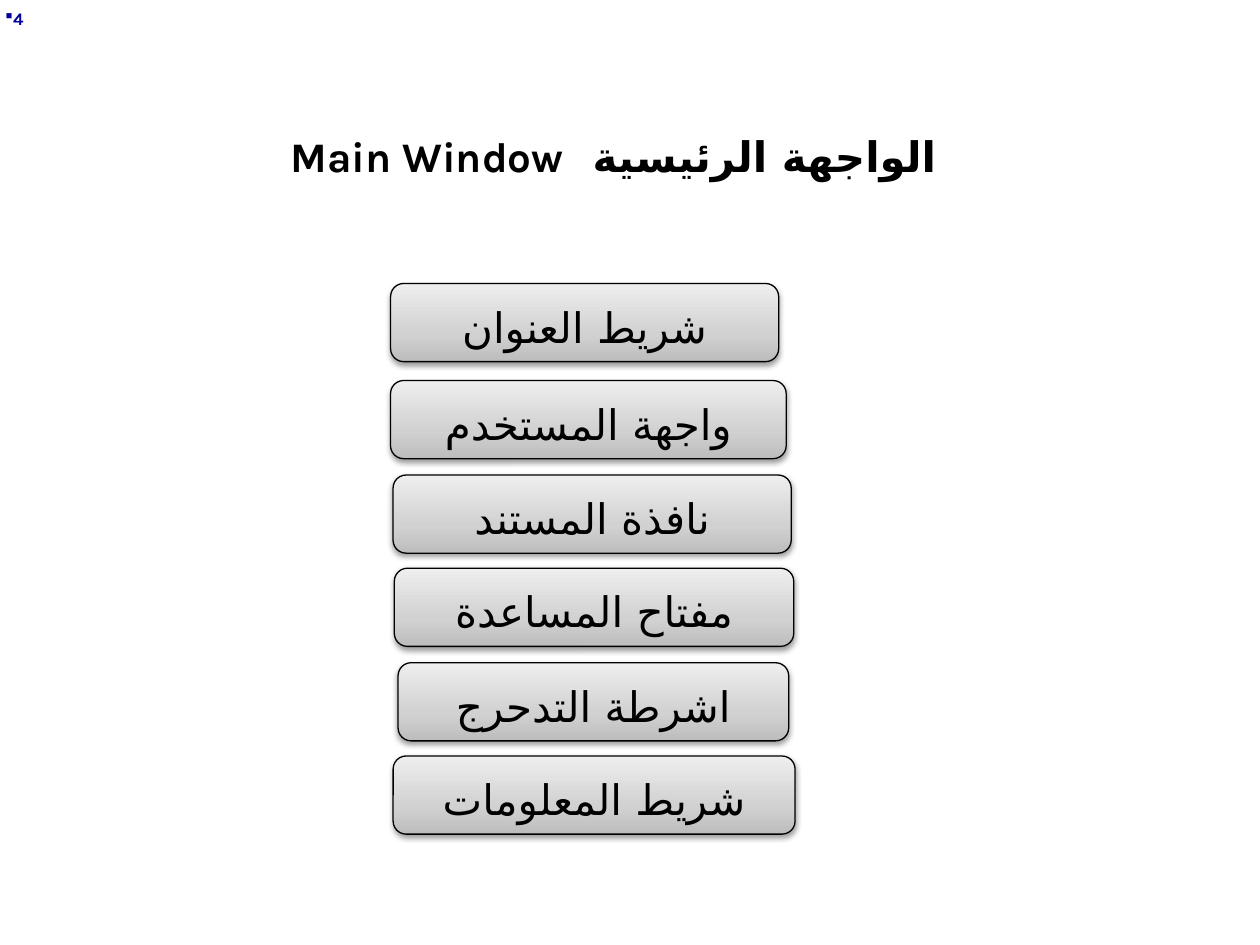
from lxml import etree
from pptx import Presentation
from pptx.dml.color import RGBColor
from pptx.enum.shapes import MSO_SHAPE
from pptx.enum.text import MSO_ANCHOR, MSO_AUTO_SIZE, PP_ALIGN
from pptx.oxml.ns import qn
from pptx.util import Inches, Pt

ROUNDED = MSO_SHAPE.ROUNDED_RECTANGLE
MIDDLE = MSO_ANCHOR.MIDDLE
GROW = MSO_AUTO_SIZE.SHAPE_TO_FIT_TEXT
CENTER = PP_ALIGN.CENTER

BLACK = RGBColor(0x00, 0x00, 0x00)
NAVY = RGBColor(0x00, 0x00, 0x99)
GREYS = [(0, RGBColor(0xBD, 0xBD, 0xBD)),
         (35, RGBColor(0xD1, 0xD1, 0xD1)),
         (100, RGBColor(0xEE, 0xEE, 0xEE))]

# left, top, width, label
BUTTONS = [
    (3.10, 2.25, 3.08, "شريط العنوان"),
    (3.10, 3.02, 3.14, "واجهة المستخدم"),
    (3.12, 3.77, 3.16, "نافذة المستند"),
    (3.13, 4.51, 3.17, "مفتاح المساعدة"),
    (3.16, 5.26, 3.10, "اشرطة التدحرج"),
    (3.12, 6.00, 3.19, "شريط المعلومات"),
]
BUTTON_HEIGHT = 0.62


def add_xml(parent, tag, **attrs):
    return etree.SubElement(parent, qn(tag), attrs)


class SlideBuilder:
    font = "Karla"
    arabic_font = "DejaVu Sans"
    text_size = 24
    number_size = 10
    line_spacing = 1.15

    def __init__(self, slide):
        self.slide = slide

    def run(self, p, text, size, color, bold=False):
        r = p.add_run()
        r.text = text
        r.font.name = self.font
        r.font.size = Pt(size)
        r.font.bold = bold
        r.font.color.rgb = color
        add_xml(r.font._element, "a:cs", typeface=self.arabic_font)

    def text_box(self, left, top, width, height):
        s = self.slide.shapes.add_textbox(
            Inches(left), Inches(top), Inches(width), Inches(height))
        s.text_frame.word_wrap = True
        return s.text_frame

    def slide_number(self, left, top, width, height, text):
        tf = self.text_box(left, top, width, height)
        tf.margin_left = Inches(0.04)
        tf.margin_top = Inches(0.06)
        tf.margin_right = tf.margin_bottom = 0
        p = tf.paragraphs[0]
        pPr = p._p.get_or_add_pPr()
        add_xml(pPr, "a:buFont", typeface="Wingdings")
        add_xml(pPr, "a:buChar", char="§")
        self.run(p, text, self.number_size, NAVY, bold=True)

    def title(self, left, top, width, height, text):
        tf = self.text_box(left, top, width, height)
        tf.auto_size = GROW
        p = tf.paragraphs[0]
        p.alignment = CENTER
        p.line_spacing = self.line_spacing
        p._p.get_or_add_pPr().set("rtl", "1")
        self.run(p, text, self.text_size, BLACK, bold=True)

    def button(self, left, top, width, height, text):
        s = self.slide.shapes.add_shape(
            ROUNDED, Inches(left), Inches(top), Inches(width), Inches(height))
        self.grey_gradient(s)
        s.line.color.rgb = BLACK
        s.line.width = Pt(0.75)
        self.soft_shadow(s)
        tf = s.text_frame
        tf.word_wrap = True
        tf.vertical_anchor = MIDDLE
        p = tf.paragraphs[0]
        p.alignment = CENTER
        p.line_spacing = self.line_spacing
        self.run(p, text, self.text_size, BLACK)

    def grey_gradient(self, s):
        """Fill from dark at the bottom to light at the top."""
        s.fill.gradient()
        s.fill.gradient_angle = 90
        stops = s._element.spPr.find(qn("a:gradFill")).find(qn("a:gsLst"))
        for stop in list(stops):
            stops.remove(stop)
        for percent, color in GREYS:
            stop = add_xml(stops, "a:gs", pos=str(percent * 1000))
            add_xml(stop, "a:srgbClr", val=str(color))

    def soft_shadow(self, s):
        s.shadow.inherit = False
        effects = s._element.spPr.find(qn("a:effectLst"))
        shadow = add_xml(effects, "a:outerShdw", blurRad=str(Pt(3.1)),
                         dist=str(Pt(1.6)), dir="5400000", rotWithShape="0")
        color = add_xml(shadow, "a:srgbClr", val=str(BLACK))
        add_xml(color, "a:alpha", val="38000")


def main():
    prs = Presentation()
    prs.slide_width = Inches(10)
    prs.slide_height = Inches(7.5)
    builder = SlideBuilder(prs.slides.add_slide(prs.slide_layouts[6]))
    builder.slide_number(0, 0, 0.58, 0.21, "4")
    builder.title(1.19, 0.93, 7.24, 0.53, "الواجهة الرئيسية  Main Window ")
    for left, top, width, label in BUTTONS:
        builder.button(left, top, width, BUTTON_HEIGHT, label)
    prs.save("out.pptx")


if __name__ == "__main__":
    main()
